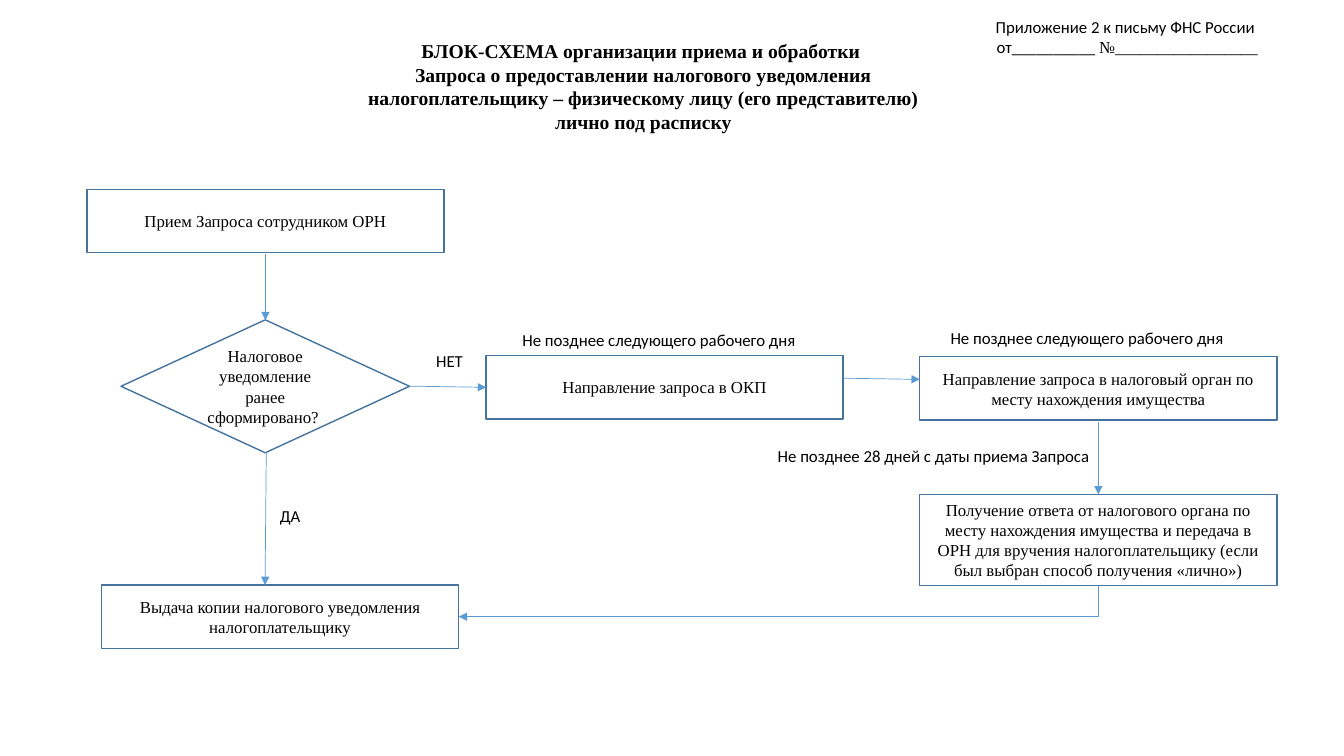
from lxml import etree
from pptx import Presentation
from pptx.dml.color import RGBColor
from pptx.enum.shapes import MSO_CONNECTOR, MSO_SHAPE
from pptx.enum.text import MSO_ANCHOR, PP_ALIGN
from pptx.oxml.ns import qn
from pptx.util import Cm, Pt

RECT, DIAMOND = MSO_SHAPE.RECTANGLE, MSO_SHAPE.DIAMOND
STRAIGHT, ELBOW = MSO_CONNECTOR.STRAIGHT, MSO_CONNECTOR.ELBOW
MIDDLE, CENTER = MSO_ANCHOR.MIDDLE, PP_ALIGN.CENTER

THEME = {
    "ink": RGBColor(0, 0, 0), "paper": RGBColor(255, 255, 255),
    "edge": RGBColor(0x43, 0x73, 0x9E), "arrow": RGBColor(0x5B, 0x9B, 0xD5),
    "serif": "Times New Roman", "sans": "Calibri",
    "title": Pt(14), "body": Pt(12), "border": Pt(1), "thin": Pt(0.5),
}

# Content: all lengths in centimetres
WIDE, TALL = 9, 1.6
DAY = "Не позднее следующего рабочего дня"
STEPS = [  # left, top, height, text
    (2.19, 4.77, TALL, "Прием Запроса сотрудником ОРН"),
    (12.25, 8.96, TALL, "Направление запроса в ОКП"),
    (23.18, 8.99, TALL, "Направление запроса в налоговый орган по месту "
     "нахождения имущества"),
    (23.18, 12.46, 2.29, "Получение ответа от налогового органа по месту "
     "нахождения имущества и передача в ОРН для вручения налогоплательщику "
     "(если был выбран способ получения «лично»)"),
    (2.56, 14.74, TALL, "Выдача копии налогового уведомления "
     "налогоплательщику"),
]
CHOICE = (3.05, 8.06, 7.27, 3.35)
ASK = "Налоговое уведомление ранее сформировано? "
TITLE = ["БЛОК-СХЕМА организации приема и обработки ",
         "Запроса о предоставлении налогового уведомления "
         "налогоплательщику – физическому лицу (его представителю) "
         "лично под расписку"]
ANNEX = ["Приложение 2 к письму ФНС России ", "от__________ "]
NUMBER = "№_________________"
LABELS = [  # left, top, width, text
    (6.14, 12.61, 2.34, "ДА"),
    (10.16, 8.71, 2.34, "НЕТ"),
    (11.02, 8.18, 11.18, DAY),
    (21.81, 8.13, 11.18, DAY),
    (17.94, 11.1, 11.18, "Не позднее 28 дней с даты приема Запроса"),
]
ARROWS = [  # start x, y, end x, y
    (6.69, 6.41, 6.69, 8.07),
    (6.71, 11.41, 6.68, 14.74),
    (10.32, 9.73, 12.25, 9.76),
    (21.25, 9.53, 23.18, 9.56),
    (27.68, 10.64, 27.68, 12.46),
]
RETURN = (27.68, 14.75, 11.56, 15.54)

deck = Presentation()
deck.slide_width, deck.slide_height = Cm(33.87), Cm(19.05)
slide = deck.slides.add_slide(deck.slide_layouts[6])
shapes = slide.shapes


def write(frame, lines, face, size=THEME["body"], bold=False):
    frame.word_wrap = True
    for i, line in enumerate(lines):
        para = frame.add_paragraph() if i else frame.paragraphs[0]
        para.add_run().text = line
        para.alignment = CENTER
        font = para.font
        font.name, font.size, font.bold = face, size, bold
        font.color.rgb = THEME["ink"]


def add_node(kind, place, text):
    node = shapes.add_shape(kind, *map(Cm, place))
    node.shadow.inherit = False
    node.fill.background()
    node.line.color.rgb = THEME["edge"]
    node.line.width = THEME["border"]
    node.text_frame.vertical_anchor = MIDDLE
    write(node.text_frame, [text], THEME["serif"])
    return node


def add_note(place, lines, face, **style):
    frame = shapes.add_textbox(*map(Cm, place)).text_frame
    write(frame, lines, face, **style)
    return frame


def add_arrow(kind, ends):
    link = shapes.add_connector(kind, *map(Cm, ends))
    link.line.color.rgb = THEME["arrow"]
    link.line.width = THEME["thin"]
    line = link.line._get_or_add_ln()
    etree.SubElement(line, qn("a:tailEnd"), type="triangle")
    etree.SubElement(link._element.spPr, qn("a:effectLst"))
    return link


# Steps and decision
for left, top, high, text in STEPS:
    add_node(RECT, (left, top, WIDE, high), text)
choice = add_node(DIAMOND, CHOICE, ASK)
choice.fill.solid()
choice.fill.fore_color.rgb = THEME["paper"]

# Arrows
for ends in ARROWS:
    add_arrow(STRAIGHT, ends)

# Return arrow: a one-bend elbow turned a quarter about its centre
x1, y1, x2, y2 = RETURN
mid_x, mid_y = (x1 + x2) / 2, (y1 + y2) / 2
half_w, half_h = (y2 - y1) / 2, (x1 - x2) / 2
bend = add_arrow(ELBOW, (mid_x - half_w, mid_y - half_h,
                         mid_x + half_w, mid_y + half_h))
props = bend._element.spPr
props.find(qn("a:xfrm")).set("rot", str(90 * 60000))
props.find(qn("a:prstGeom")).set("prst", "bentConnector2")

# Title, annex reference and arrow labels
add_note((8.47, 0.86, 15.49, 2.64), TITLE, THEME["serif"],
         size=THEME["title"], bold=True)
annex = add_note((23.43, 0.29, 9.96, 1.27), ANNEX, THEME["sans"])
number = annex.paragraphs[-1].add_run()
number.text = NUMBER
number.font.name = THEME["serif"]
for left, top, width, text in LABELS:
    add_note((left, top, width, 0.77), [text], THEME["sans"])

deck.save("out.pptx")
